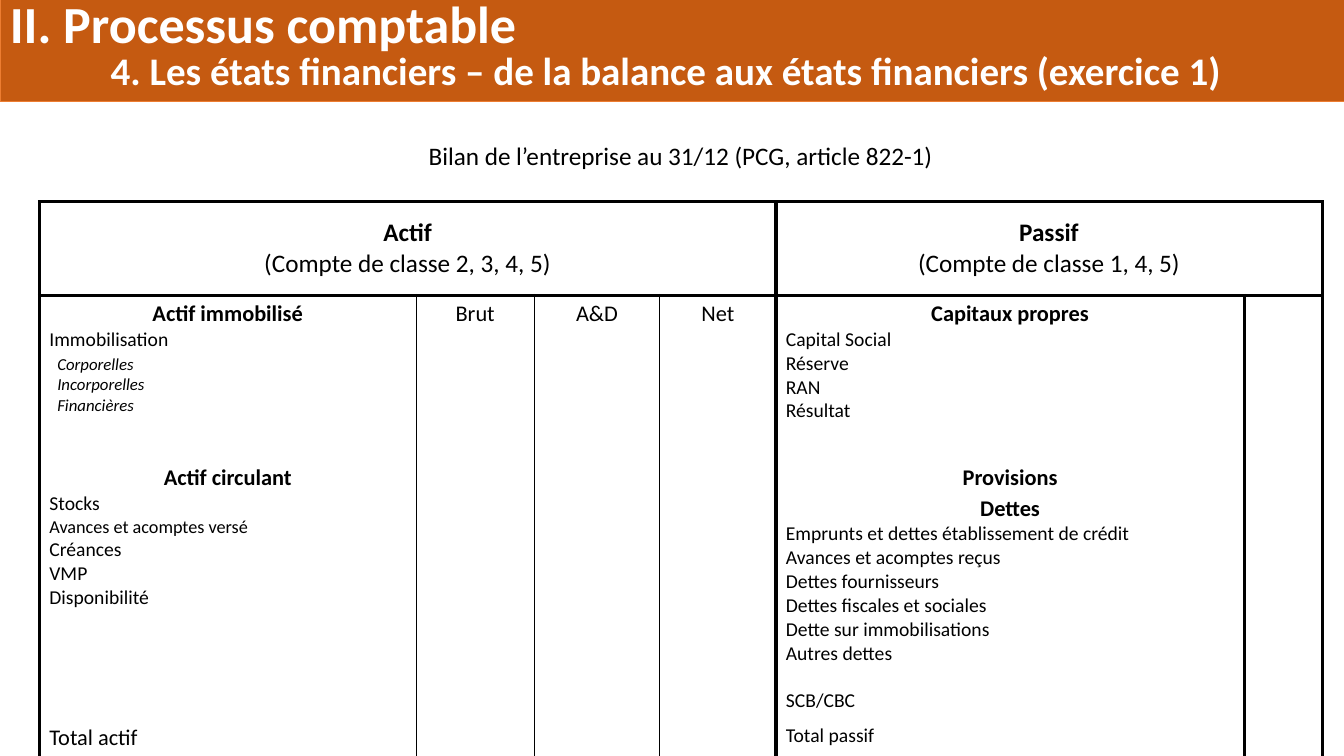
from lxml.etree import SubElement
from pptx import Presentation
from pptx.dml.color import RGBColor
from pptx.enum.shapes import MSO_SHAPE
from pptx.enum.text import MSO_ANCHOR, PP_ALIGN
from pptx.oxml.ns import qn
from pptx.util import Cm, Pt

COLORS = {"banner": "C55A11", "banner_line": "ED7D31", "white": "FFFFFF", "black": "000000"}
CENTER = {"align": PP_ALIGN.CENTER}
HEADING = {"size": 16, "bold": True, **CENTER}
COLUMN = {"size": 16, **CENTER}
ITEM = {"size": 14}
DETAIL = {"size": 12, "italic": True, "indent": 0.2}
BANNER = {"color": "white", "bold": True, "line_spacing": 0.7, "space_before": 5}

TITLE = [
    ("II. Processus comptable", {**BANNER, "size": 37.2}),
    ("4. Les états financiers – de la balance aux états financiers (exercice 1)",
     {**BANNER, "size": 27.9, "indent": 2.54}),
]
COLUMN_WIDTHS = [9.5, 2.97, 3.17, 2.92, 11.81, 1.96]
ROW_HEIGHTS = [1.65, 2.36, 4.14, 6.53, 0.94]
SPANS = [(0, 0, 5), (1, 0, 3), (1, 4, 5)]
VERTICAL_LINES = [2.25, 1, 1, 1, 3, 2.25, 2.25]
HORIZONTAL_LINES = [0, 2.25, 2.25, 0, 0, 2.25]
CELLS = {
    (0, 0): [("Bilan de l’entreprise au 31/12 (PCG, article 822-1)", CENTER)],
    (1, 0): [("Actif", {**CENTER, "bold": True}), ("(Compte de classe 2, 3, 4, 5)", CENTER)],
    (1, 4): [("Passif", {**CENTER, "bold": True}), ("(Compte de classe 1, 4, 5)", CENTER)],
    (2, 0): [
        ("Actif immobilisé", HEADING),
        ("Immobilisation", ITEM),
        ("Corporelles", {**DETAIL, "space_before": 2}),
        ("Incorporelles", DETAIL),
        ("Financières", DETAIL),
    ],
    (2, 1): [("Brut", COLUMN)],
    (2, 2): [("A&D", COLUMN)],
    (2, 3): [("Net", COLUMN)],
    (2, 4): [
        ("Capitaux propres", HEADING),
        ("Capital Social", ITEM),
        ("Réserve", ITEM),
        ("RAN", ITEM),
        ("Résultat", ITEM),
    ],
    (3, 0): [
        ("Actif circulant", HEADING),
        ("Stocks", ITEM),
        ("Avances et acomptes versé", {"size": 13}),
        ("Créances", ITEM),
        ("VMP", ITEM),
        ("Disponibilité", ITEM),
    ],
    (3, 4): [
        ("Provisions", HEADING),
        ("Dettes", {**HEADING, "space_before": 2}),
        ("Emprunts et dettes établissement de crédit", ITEM),
        ("Avances et acomptes reçus", ITEM),
        ("Dettes fournisseurs", ITEM),
        ("Dettes fiscales et sociales", ITEM),
        ("Dette sur immobilisations", ITEM),
        ("Autres dettes", ITEM),
        ("SCB/CBC", {**ITEM, "space_before": 17}),
    ],
    (4, 0): [("Total actif", {"size": 16})],
    (4, 4): [("Total passif", ITEM)],
}


def write(paragraph, text, size=18, color="black", bold=False, italic=False,
          align=PP_ALIGN.LEFT, indent=0, line_spacing=1.0, space_before=0):
    paragraph.alignment = align
    paragraph.line_spacing = line_spacing
    paragraph.space_before = Pt(space_before)
    if indent:
        paragraph._p.get_or_add_pPr().set("marL", str(Cm(indent)))
    run = paragraph.add_run()
    run.text = text
    font = run.font
    font.name, font.size, font.bold, font.italic = "Calibri", Pt(size), bold, italic
    font.color.rgb = RGBColor.from_string(COLORS[color])


def fill_text(frame, lines):
    for index, (text, style) in enumerate(lines):
        paragraph = frame.add_paragraph() if index else frame.paragraphs[0]
        write(paragraph, text, **style)


def set_borders(cell, **widths):
    properties = cell._tc.get_or_add_tcPr()
    for index, (side, width) in enumerate(widths.items()):
        line = SubElement(properties, qn(f"a:ln{side}"), w=str(Pt(width)))
        if width:
            solid = SubElement(line, qn("a:solidFill"))
            SubElement(solid, qn("a:srgbClr"), val=COLORS["black"])
        else:
            SubElement(line, qn("a:noFill"))
        properties.insert(index, line)


def add_banner(slide):
    banner = slide.shapes.add_shape(MSO_SHAPE.RECTANGLE, Cm(0), Cm(-0.03), Cm(33.87), Cm(2.59))
    banner.shadow.inherit = False
    banner.fill.solid()
    banner.fill.fore_color.rgb = RGBColor.from_string(COLORS["banner"])
    banner.line.color.rgb = RGBColor.from_string(COLORS["banner_line"])
    banner.line.width = Pt(0.5)
    banner.text_frame.word_wrap = True
    banner.text_frame.vertical_anchor = MSO_ANCHOR.MIDDLE
    fill_text(banner.text_frame, TITLE)


def add_balance_sheet(slide):
    table = slide.shapes.add_table(
        len(ROW_HEIGHTS), len(COLUMN_WIDTHS), Cm(0.99), Cm(3.43),
        Cm(sum(COLUMN_WIDTHS)), Cm(sum(ROW_HEIGHTS))).table
    table.first_row = table.horz_banding = False
    for column, width in zip(table.columns, COLUMN_WIDTHS):
        column.width = Cm(width)
    for row, height in zip(table.rows, ROW_HEIGHTS):
        row.height = Cm(height)
    for row, first, last in SPANS:
        table.cell(row, first).merge(table.cell(row, last))
    for row in range(len(ROW_HEIGHTS)):
        for column in range(len(COLUMN_WIDTHS)):
            cell = table.cell(row, column)
            cell.fill.background()
            right = column + 1
            if cell.is_merge_origin:
                right = column + cell.span_width
            left_line, right_line = VERTICAL_LINES[column], VERTICAL_LINES[right]
            if row == 0:
                left_line = right_line = 0
            set_borders(cell, L=left_line, R=right_line,
                        T=HORIZONTAL_LINES[row], B=HORIZONTAL_LINES[row + 1])
            if row == 1:
                cell.vertical_anchor = MSO_ANCHOR.MIDDLE
            if not cell.is_spanned:
                fill_text(cell.text_frame, CELLS.get((row, column), [("", ITEM)]))


def main():
    presentation = Presentation()
    presentation.slide_width, presentation.slide_height = Cm(33.87), Cm(19.05)
    slide = presentation.slides.add_slide(presentation.slide_layouts[6])
    add_banner(slide)
    add_balance_sheet(slide)
    presentation.save("out.pptx")


if __name__ == "__main__":
    main()
